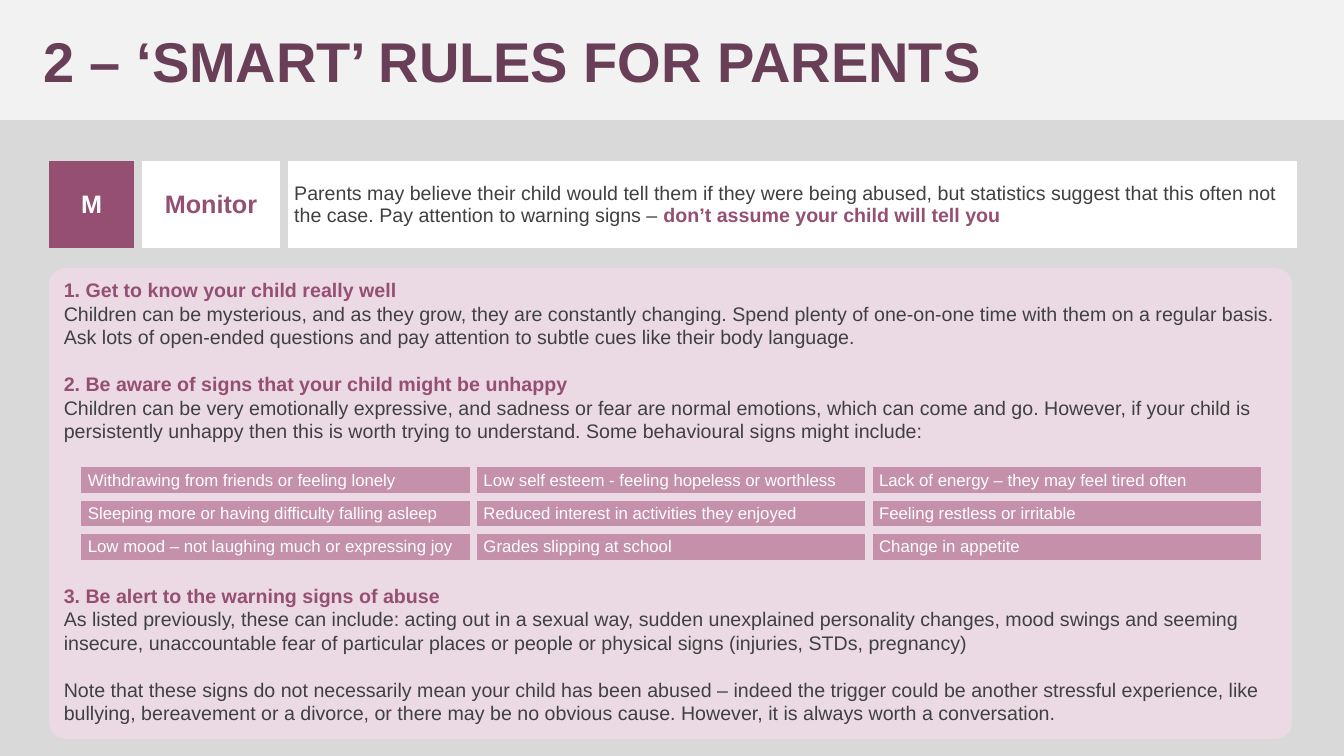
from dataclasses import dataclass

from lxml.etree import SubElement
from pptx import Presentation
from pptx.dml.color import RGBColor
from pptx.enum.shapes import MSO_SHAPE
from pptx.enum.text import MSO_ANCHOR, MSO_AUTO_SIZE, PP_ALIGN
from pptx.oxml.ns import qn
from pptx.util import Cm, Pt


@dataclass(frozen=True)
class Theme:
    font: str = "Arial"
    backdrop: str = "D9D9D9"
    banner: str = "F2F2F2"
    heading: str = "683F56"
    accent: str = "954F72"
    panel: str = "EBDAE3"
    sign: str = "C490AA"
    body: str = "404040"
    white: str = "FFFFFF"
    title_size: float = 40
    label_size: float = 18
    body_size: float = 14
    sign_size: float = 12
    line_pitch: float = 16.8
    border: float = 6


class RulesSlide:
    def __init__(self, deck, theme):
        self.theme = theme
        self.slide = deck.slides.add_slide(deck.slide_layouts[5])
        self.paint(self.slide.background, theme.backdrop)

    def paint(self, target, color):
        target.fill.solid()
        target.fill.fore_color.rgb = RGBColor.from_string(color)

    def style(self, run, size, color, bold=False):
        run.font.name = self.theme.font
        run.font.size = Pt(size)
        run.font.bold = bold
        run.font.color.rgb = RGBColor.from_string(color)

    def title(self, wording, height):
        banner = self.slide.shapes.title
        banner.left, banner.top = Cm(0), Cm(0)
        banner.width, banner.height = Cm(33.87), Cm(height)
        self.paint(banner, self.theme.banner)
        frame = banner.text_frame
        frame.text = wording
        frame.auto_size = MSO_AUTO_SIZE.NONE
        frame.vertical_anchor = MSO_ANCHOR.MIDDLE
        frame.margin_left = Cm(1.09)
        frame.paragraphs[0].alignment = PP_ALIGN.LEFT
        self.style(frame.paragraphs[0].runs[0], self.theme.title_size, self.theme.heading, True)

    def table(self, left, top, widths, row_height, row_count, border):
        grid = self.slide.shapes.add_table(
            row_count, len(widths), Cm(left), Cm(top),
            Cm(sum(widths)), Cm(row_height * row_count)).table
        grid.first_row = grid.horz_banding = False
        for column, width in zip(grid.columns, widths):
            column.width = Cm(width)
        for row in grid.rows:
            row.height = Cm(row_height)
        for cell in grid.iter_cells():
            self.outline(cell, border)
        return grid

    def outline(self, cell, color):
        properties = cell._tc.get_or_add_tcPr()
        for side in ("a:lnL", "a:lnR", "a:lnT", "a:lnB"):
            edge = SubElement(properties, qn(side), w=str(Pt(self.theme.border)))
            SubElement(SubElement(edge, qn("a:solidFill")), qn("a:srgbClr"), val=color)

    def cell(self, cell, wording, fill, size, color, bold=False, align=PP_ALIGN.LEFT):
        self.paint(cell, fill)
        cell.vertical_anchor = MSO_ANCHOR.MIDDLE
        cell.text_frame.text = wording
        paragraph = cell.text_frame.paragraphs[0]
        paragraph.alignment = align
        self.style(paragraph.runs[0], size, color, bold)
        return paragraph

    def panel(self, left, top, width, height, advice):
        theme = self.theme
        panel = self.slide.shapes.add_shape(
            MSO_SHAPE.ROUNDED_RECTANGLE, Cm(left), Cm(top), Cm(width), Cm(height))
        panel.adjustments[0] = 0.034
        panel.shadow.inherit = False
        panel.line.fill.background()
        self.paint(panel, theme.panel)
        frame = panel.text_frame
        frame.word_wrap = True
        frame.vertical_anchor = MSO_ANCHOR.TOP
        frame.text = "\n".join(wording for wording, _, _ in advice)
        for paragraph, (_, is_heading, lines_before) in zip(frame.paragraphs, advice):
            paragraph.alignment = PP_ALIGN.LEFT
            paragraph.line_spacing = Pt(theme.line_pitch)
            paragraph.space_before = Pt(theme.line_pitch * lines_before)
            color = theme.accent if is_heading else theme.body
            self.style(paragraph.runs[0], theme.body_size, color, is_heading)


ADVICE = [
    ("1. Get to know your child really well", True, 0),
    ("Children can be mysterious, and as they grow, they are constantly changing. "
     "Spend plenty of one-on-one time with them on a regular basis. Ask lots of "
     "open-ended questions and pay attention to subtle cues like their body language.", False, 0),
    ("2. Be aware of signs that your child might be unhappy", True, 1),
    ("Children can be very emotionally expressive, and sadness or fear are normal "
     "emotions, which can come and go. However, if your child is persistently unhappy "
     "then this is worth trying to understand. Some behavioural signs might include:", False, 0),
    ("3. Be alert to the warning signs of abuse", True, 6),
    ("As listed previously, these can include: acting out in a sexual way, sudden "
     "unexplained personality changes, mood swings and seeming insecure, unaccountable "
     "fear of particular places or people or physical signs (injuries, STDs, pregnancy)", False, 0),
    ("Note that these signs do not necessarily mean your child has been abused – indeed "
     "the trigger could be another stressful experience, like bullying, bereavement or a "
     "divorce, or there may be no obvious cause. However, it is always worth a "
     "conversation.", False, 1),
]

SIGNS = [
    "Withdrawing from friends or feeling lonely",
    "Low self esteem - feeling hopeless or worthless",
    "Lack of energy – they may feel tired often",
    "Sleeping more or having difficulty falling asleep",
    "Reduced interest in activities they enjoyed",
    "Feeling restless or irritable",
    "Low mood – not laughing much or expressing joy",
    "Grades slipping at school",
    "Change in appetite",
]


def main():
    deck = Presentation()
    deck.slide_width, deck.slide_height = Cm(33.87), Cm(19.05)
    theme = Theme()
    rules = RulesSlide(deck, theme)
    rules.title("2 – ‘SMART’ RULES FOR PARENTS", 3.02)

    monitor = rules.table(1.14, 3.96, [2.34, 3.68, 25.63], 2.39, 1, theme.backdrop)
    rules.cell(monitor.cell(0, 0), "M", theme.accent, theme.label_size,
               theme.white, True, PP_ALIGN.CENTER)
    rules.cell(monitor.cell(0, 1), "Monitor", theme.white, theme.label_size,
               theme.accent, True, PP_ALIGN.CENTER)
    reason = rules.cell(
        monitor.cell(0, 2),
        "Parents may believe their child would tell them if they were being abused, but "
        "statistics suggest that this often not the case. Pay attention to warning signs – ",
        theme.white, theme.body_size, theme.body)
    warning = reason.add_run()
    warning.text = "don’t assume your child will tell you"
    rules.style(warning, theme.body_size, theme.accent, True)

    rules.panel(1.24, 6.76, 31.32, 11.86, ADVICE)

    signs = rules.table(1.96, 11.68, [9.97] * 3, 0.84, 3, theme.panel)
    for cell, sign in zip(signs.iter_cells(), SIGNS):
        rules.cell(cell, sign, theme.sign, theme.sign_size, theme.white)

    deck.save("out.pptx")


if __name__ == "__main__":
    main()
